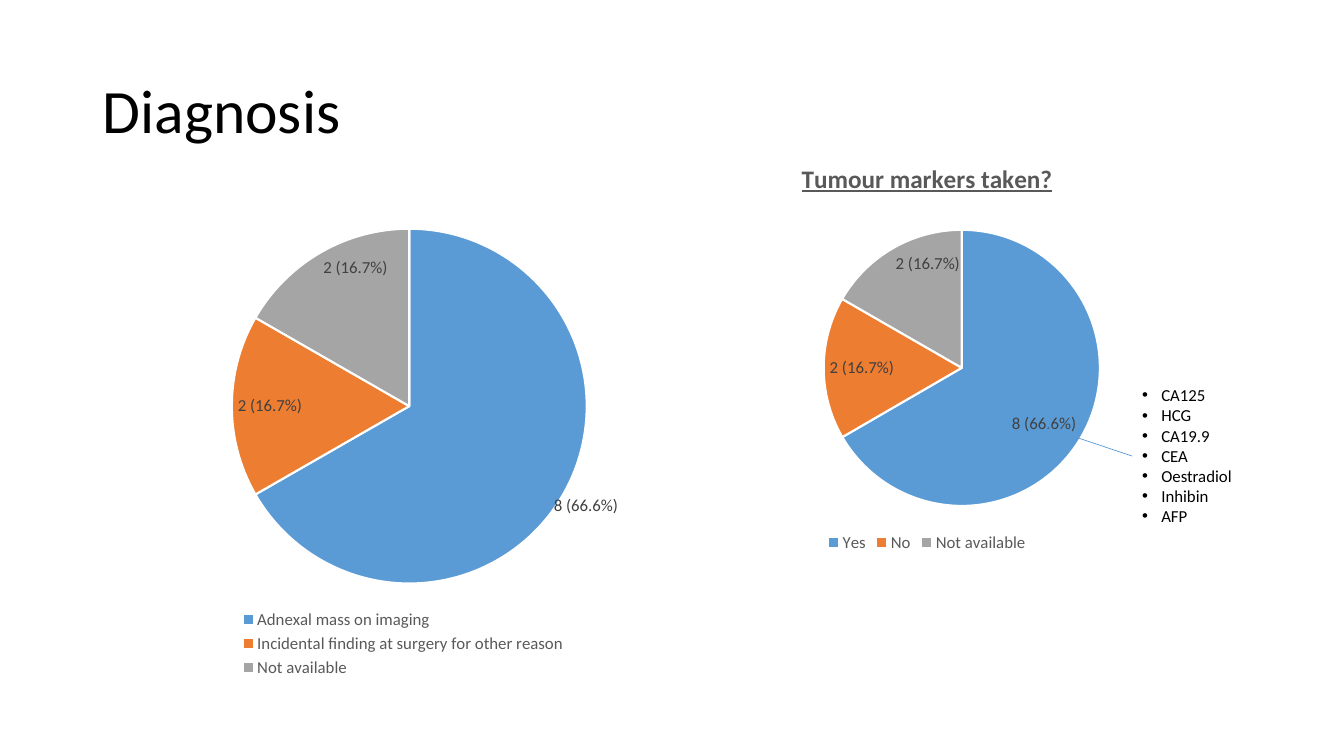
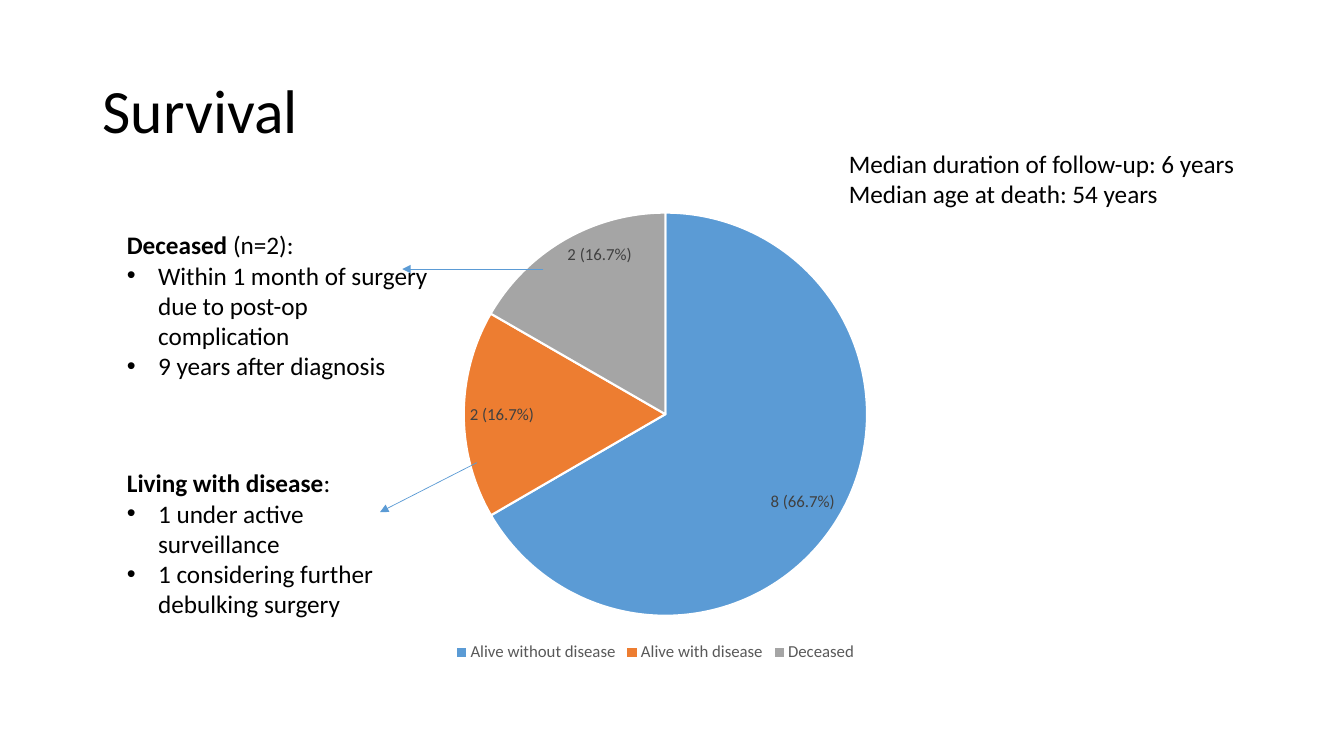
from dataclasses import dataclass

from lxml.etree import SubElement
from pptx import Presentation
from pptx.chart.data import CategoryChartData
from pptx.dml.color import RGBColor
from pptx.enum.chart import XL_CHART_TYPE, XL_LABEL_POSITION, XL_LEGEND_POSITION
from pptx.enum.shapes import MSO_CONNECTOR
from pptx.enum.text import MSO_ANCHOR, MSO_AUTO_SIZE
from pptx.oxml.ns import qn
from pptx.util import Inches, Pt


@dataclass(frozen=True)
class Theme:
    font: str = "Calibri"
    ink: str = "000000"
    legend_ink: str = "595959"
    label_ink: str = "404040"
    edge: str = "FFFFFF"
    line: str = "5B9BD5"
    slices: tuple = ("5B9BD5", "ED7D31", "A5A5A5")
    title: int = 44
    body: int = 18
    small: int = 12


THEME = Theme()
TITLE_AREA = (0.92, 0.4, 11.5, 1.45)

# Content: areas are left, top, width, height; a pie is centre x, centre y, radius.
# A paragraph is (bulleted, [(text, bold), ...]).
SLIDES = [
    {
        "title": "Diagnosis",
        "charts": [
            {
                "area": (0.92, 2, 6.16, 4.76),
                "pie": (4.06, 4.03, 1.76),
                "slices": [
                    ("Adnexal mass on imaging", 0.667, "8 (66.6%)"),
                    ("Incidental finding at surgery for other reason", 0.166, "2 (16.7%)"),
                    ("Not available", 0.167, "2 (16.7%)"),
                ],
                "label_shift": (0.6, 0.24),
            },
            {
                "area": (6.81, 1.42, 4.77, 4.1),
                "pie": (9.54, 3.65, 1.37),
                "title": "Tumour markers taken?",
                "slices": [
                    ("Yes", 0.667, "8 (66.6%)"),
                    ("No", 0.167, "2 (16.7%)"),
                    ("Not available", 0.167, "2 (16.7%)"),
                ],
            },
        ],
        "notes": [
            {
                "area": (11.23, 3.77, 1.54, 1.51),
                "size": THEME.small,
                "indent": 0.19,
                "paragraphs": [
                    (True, [(marker, False)])
                    for marker in ("CA125", "HCG", "CA19.9", "CEA", "Oestradiol", "Inhibin", "AFP")
                ],
            },
        ],
        "lines": [{"start": (10.38, 4.24), "end": (11.23, 4.53), "joins_note": 0}],
    },
    {
        "title": "Survival",
        "charts": [
            {
                "area": (2.61, 1.85, 7.78, 4.76),
                "pie": (6.6, 4.11, 2),
                "slices": [
                    ("Alive without disease", 0.667, "8 (66.7%)"),
                    ("Alive with disease", 0.167, "2 (16.7%)"),
                    ("Deceased", 0.167, "2 (16.7%)"),
                ],
            },
        ],
        "notes": [
            {
                "area": (1.16, 2.23, 3.23, 1.62),
                "paragraphs": [
                    (False, [("Deceased", True), (" (n=2):", False)]),
                    (True, [("Within 1 month of surgery due to post-op complication", False)]),
                    (True, [("9 years after diagnosis", False)]),
                ],
            },
            {
                "area": (1.16, 4.59, 2.95, 1.62),
                "paragraphs": [
                    (False, [("Living with disease", True), (":", False)]),
                    (True, [("1 under active surveillance", False)]),
                    (True, [("1 considering further debulking surgery", False)]),
                ],
            },
            {
                "area": (8.32, 1.42, 4.28, 0.71),
                "paragraphs": [
                    (False, [("Median duration of follow-up: 6 years", False)]),
                    (False, [("Median age at death: 54 years", False)]),
                ],
            },
        ],
        "lines": [
            {"start": (5.39, 2.67), "end": (3.99, 2.67), "arrow": True},
            {"start": (4.73, 4.59), "end": (3.77, 5.08), "arrow": True},
        ],
    },
]


# Text
def style_font(font, size, color=THEME.ink, bold=False):
    font.name = THEME.font
    font.size = Pt(size)
    font.bold = bold
    font.color.rgb = RGBColor.from_string(color)


def add_span(para, text, size, color=THEME.ink, bold=False):
    span = para.add_run()
    span.text = text
    style_font(span.font, size, color, bold)
    return span


def add_bullet(para, indent):
    properties = para._p.get_or_add_pPr()
    properties.set("marL", str(Inches(indent)))
    properties.set("indent", str(-Inches(indent)))
    SubElement(properties, qn("a:buFont")).set("typeface", "Arial")
    SubElement(properties, qn("a:buChar")).set("char", "•")


def add_box(page, area):
    box = page.shapes.add_textbox(*map(Inches, area))
    box.text_frame.word_wrap = True
    return box


def add_title(page, text):
    frame = add_box(page, TITLE_AREA).text_frame
    frame.vertical_anchor = MSO_ANCHOR.MIDDLE
    para = frame.paragraphs[0]
    para.line_spacing = 0.9
    add_span(para, text, THEME.title)


def add_note(page, note):
    box = add_box(page, note["area"])
    frame = box.text_frame
    frame.auto_size = MSO_AUTO_SIZE.SHAPE_TO_FIT_TEXT
    for index, (bulleted, spans) in enumerate(note["paragraphs"]):
        para = frame.add_paragraph() if index else frame.paragraphs[0]
        if bulleted:
            add_bullet(para, note.get("indent", 0.31))
        for text, bold in spans:
            add_span(para, text, note.get("size", THEME.body), bold=bold)
    return box


# Charts
def set_layout(parent, position, **values):
    """Give a chart part a manual layout, in fractions of the chart."""
    for old in parent.findall(qn("c:layout")):
        parent.remove(old)
    layout = SubElement(parent, qn("c:layout"))
    parent.insert(position, layout)
    manual = SubElement(layout, qn("c:manualLayout"))
    for name, value in values.items():
        SubElement(manual, qn(f"c:{name}")).set("val", str(value))


def place_pie(chart, area, pie):
    left, top, width, height = area
    center_x, center_y, radius = pie
    set_layout(
        chart.element.xpath(".//c:plotArea")[0], 0,
        layoutTarget="inner", xMode="edge", yMode="edge",
        x=round((center_x - radius - left) / width, 4),
        y=round((center_y - radius - top) / height, 4),
        w=round(2 * radius / width, 4),
        h=round(2 * radius / height, 4),
    )


def add_pie(page, content):
    area = content["area"]
    data = CategoryChartData(number_format="0.0%")
    data.categories = [name for name, _, _ in content["slices"]]
    data.add_series("Series 1", [value for _, value, _ in content["slices"]])
    chart = page.shapes.add_chart(XL_CHART_TYPE.PIE, *map(Inches, area), data).chart
    style_font(chart.font, 10)

    chart.has_title = "title" in content
    if chart.has_title:
        para = chart.chart_title.text_frame.paragraphs[0]
        span = add_span(para, content["title"], THEME.body, THEME.legend_ink, True)
        span.font.underline = True
        chart.chart_title.include_in_layout = False

    chart.has_legend = True
    chart.legend.position = XL_LEGEND_POSITION.BOTTOM
    chart.legend.include_in_layout = False
    style_font(chart.legend.font, THEME.small, THEME.legend_ink)

    plot = chart.plots[0]
    plot.vary_by_categories = True
    series = plot.series[0]
    labels = series.data_labels
    labels.show_value = True
    labels.number_format = "0.0%"
    labels.number_format_is_linked = False
    labels.position = XL_LABEL_POSITION.INSIDE_END
    style_font(labels.font, THEME.small, THEME.label_ink)

    for index, (_, _, text) in enumerate(content["slices"]):
        point = series.points[index]
        point.format.fill.solid()
        point.format.fill.fore_color.rgb = RGBColor.from_string(THEME.slices[index])
        point.format.line.color.rgb = RGBColor.from_string(THEME.edge)
        point.format.line.width = Pt(1.5)
        label = point.data_label
        add_span(label.text_frame.paragraphs[0], text, THEME.small, THEME.label_ink)
        label.position = XL_LABEL_POSITION.INSIDE_END

    if "label_shift" in content:
        shift_x, shift_y = content["label_shift"]
        first_label = chart.element.xpath(".//c:dLbl")[0]
        set_layout(first_label, 1, x=round(shift_x / area[2], 4), y=round(shift_y / area[3], 4))
    place_pie(chart, area, content["pie"])


# Lines and arrows
def add_line(page, line, notes):
    ends = map(Inches, line["start"] + line["end"])
    connector = page.shapes.add_connector(MSO_CONNECTOR.STRAIGHT, *ends)
    connector.line.color.rgb = RGBColor.from_string(THEME.line)
    connector.line.width = Pt(0.5)
    if line.get("arrow"):
        SubElement(connector.line._get_or_add_ln(), qn("a:tailEnd")).set("type", "triangle")
    SubElement(connector._element.spPr, qn("a:effectLst"))
    if "joins_note" in line:
        connector.end_connect(notes[line["joins_note"]], 1)


def main():
    deck = Presentation()
    deck.slide_width, deck.slide_height = Inches(13.33), Inches(7.5)
    for content in SLIDES:
        page = deck.slides.add_slide(deck.slide_layouts[6])
        add_title(page, content["title"])
        for chart in content["charts"]:
            add_pie(page, chart)
        notes = [add_note(page, note) for note in content["notes"]]
        for line in content["lines"]:
            add_line(page, line, notes)
    deck.save("out.pptx")


if __name__ == "__main__":
    main()
